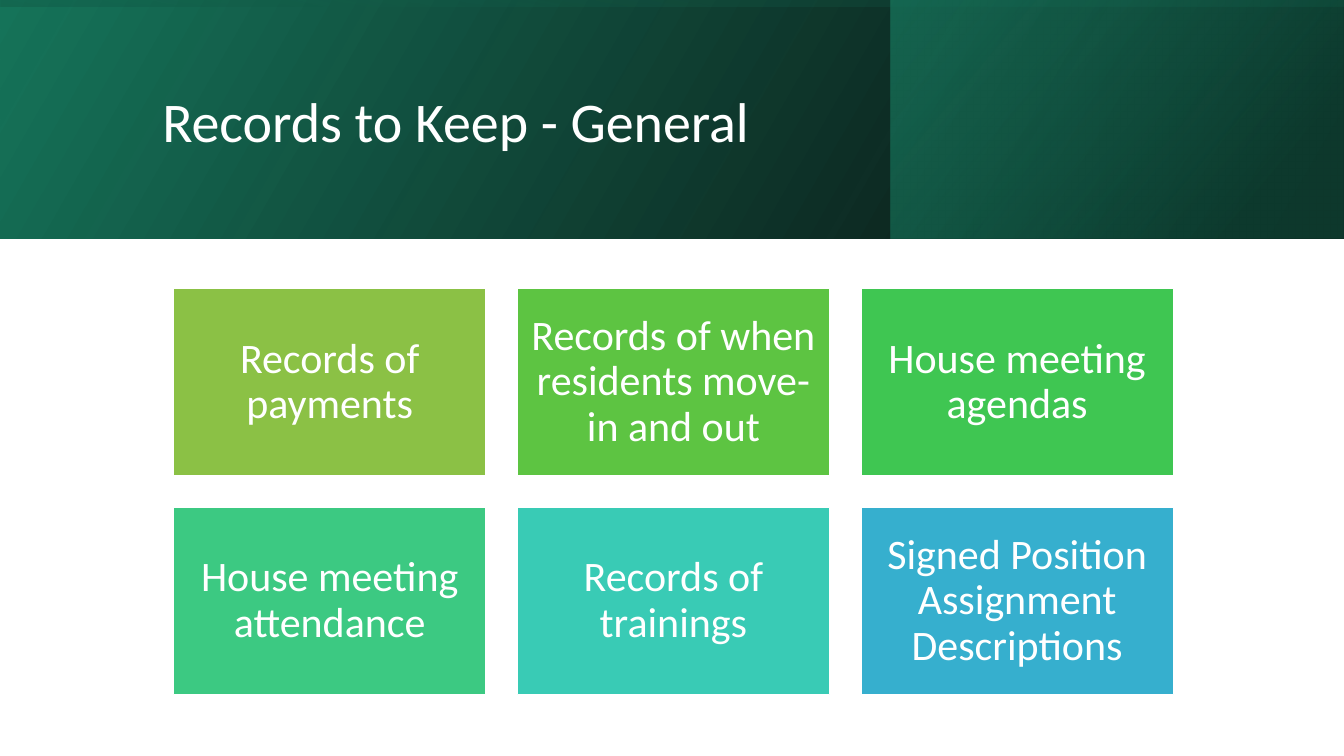
from dataclasses import dataclass

from pptx import Presentation
from pptx.dml.color import RGBColor as RGB
from pptx.enum.shapes import MSO_SHAPE as SHAPE
from pptx.enum.text import MSO_ANCHOR as ANCHOR, MSO_AUTO_SIZE as AUTOSIZE, PP_ALIGN as ALIGN
from pptx.oxml.ns import qn
from pptx.util import Pt


@dataclass(frozen=True)
class Theme:
    font: str = "Calibri"
    title_size: int = 40
    card_size: int = 30
    white: str = "FFFFFF"
    black: str = "000000"
    green: str = "16745A"
    deep_green: str = "0E4D3C"
    bright_green: str = "1D9A78"
    cards: tuple = ("8BC145", "5DC442", "3FC652", "3CC982", "39CBB5", "36AFCE")


theme = Theme()


def write(shape, text, size, align, inset):
    tf = shape.text_frame
    frame_format = {
        "text": text, "word_wrap": True, "auto_size": AUTOSIZE.NONE,
        "vertical_anchor": ANCHOR.MIDDLE,
        "margin_left": Pt(inset[0]), "margin_right": Pt(inset[0]),
        "margin_top": Pt(inset[1]), "margin_bottom": Pt(inset[1]),
    }
    for name, value in frame_format.items():
        setattr(tf, name, value)
    p = tf.paragraphs[0]
    p.alignment, p.line_spacing = align, 0.9
    font = p.runs[0].font
    font.name, font.size = theme.font, Pt(size)
    font.color.rgb = RGB.from_string(theme.white)


def add_rect(left, top, width, height):
    sp = s.shapes.add_shape(SHAPE.RECTANGLE, Pt(left), Pt(top), Pt(width), Pt(height))
    sp.shadow.inherit = False
    return sp


prs = Presentation()
prs.slide_width, prs.slide_height = Pt(960), Pt(540)
s = prs.slides.add_slide(prs.slide_layouts[5])

# Header: three mirrored gradient bands; stops are (position, colour, opacity in %)
BAND_H = 170.64
bands = [
    ((0, 0, 960, BAND_H), 0, 30,
     [(0, theme.black, 96), (1, theme.green, 100)]),
    ((636.2, 0, 323.2, BAND_H), 0, 40,
     [(0.19, theme.deep_green, 68), (1, theme.bright_green, 48)]),
    ((480 - BAND_H / 2, BAND_H / 2 - 480, BAND_H, 960), 270, 10,
     [(0.23, theme.green, 16), (0.99, theme.black, 45)]),
]
for box, rotation, angle, stops in bands:
    band = add_rect(*box)
    band.rotation = rotation
    band._element.spPr.find(qn("a:xfrm")).set("flipH", "1")
    band.line.fill.background()
    band.fill.gradient()
    band.fill.gradient_angle = angle
    for stop, (position, color, _) in zip(band.fill.gradient_stops, stops):
        stop.position = position
        stop.color.rgb = RGB.from_string(color)
    colors = band._element.spPr.iter(qn("a:srgbClr"))
    for color, (_, _, opacity) in zip(list(colors), stops):
        alpha = color.makeelement(qn("a:alpha"), {"val": str(opacity * 1000)})
        color.append(alpha)

# Title, brought in front of the bands
title = s.shapes.title
band._element.addnext(title._element)
title.left, title.top, title.width, title.height = Pt(108.72), Pt(27.36), Pt(765.36), Pt(122.4)
write(title, "Records to Keep - General", theme.title_size, ALIGN.LEFT, (7.2, 3.6))

# Cards: three columns by two rows
COLUMNS, LEFT, TOP = 3, 124, 206.2
CARD_W, CARD_H, GAP = 223.2, 133.9, 22.3
records = [
    "Records of payments",
    "Records of when residents move-in and out",
    "House meeting agendas",
    "House meeting attendance",
    "Records of trainings",
    "Signed Position Assignment Descriptions",
]
for i, (record, color) in enumerate(zip(records, theme.cards)):
    row, column = divmod(i, COLUMNS)
    card = add_rect(LEFT + column * (CARD_W + GAP), TOP + row * (CARD_H + GAP), CARD_W, CARD_H)
    card.fill.solid()
    card.fill.fore_color.rgb = RGB.from_string(color)
    card.line.color.rgb = RGB.from_string(theme.white)
    card.line.width = Pt(1)
    write(card, record, theme.card_size, ALIGN.CENTER, (9, 9))

prs.save("out.pptx")
